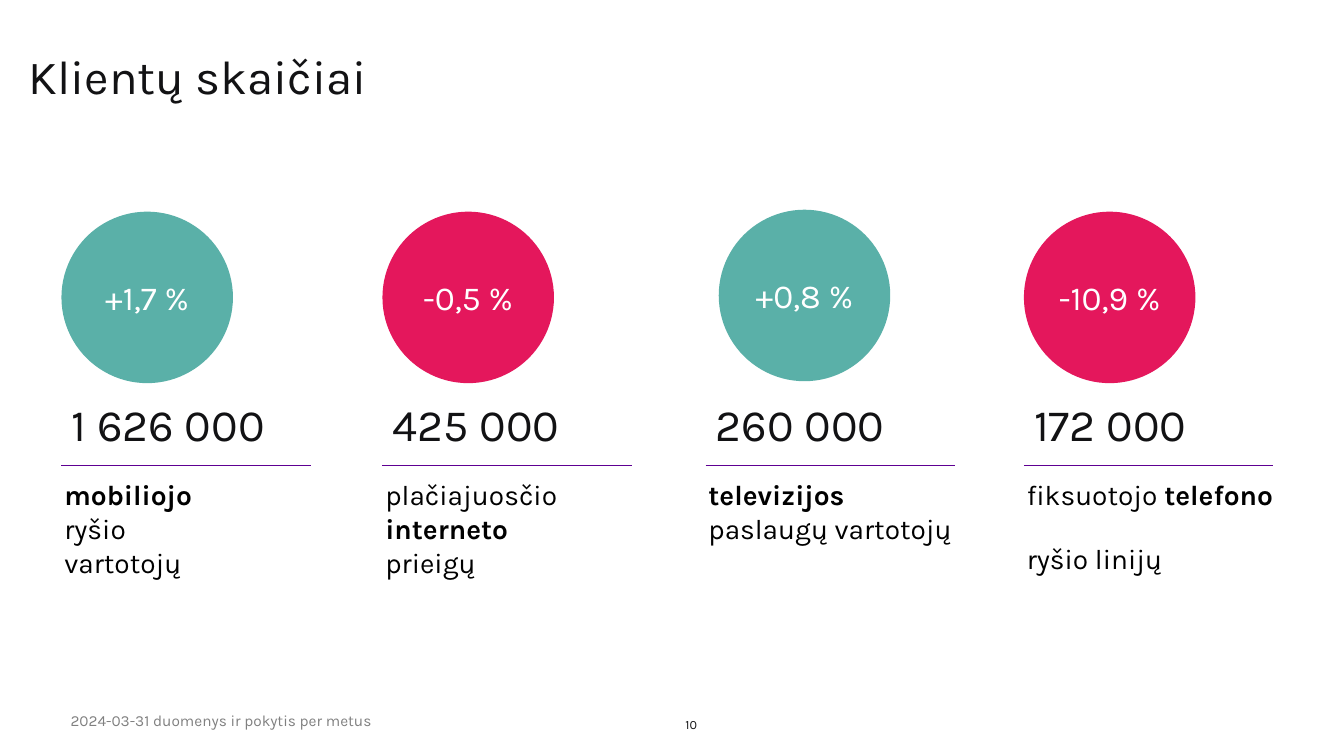
"""Build the slide of customer counts and their yearly change."""
from dataclasses import dataclass

from pptx import Presentation
from pptx.dml.color import RGBColor
from pptx.enum.shapes import MSO_CONNECTOR, MSO_SHAPE
from pptx.enum.text import MSO_ANCHOR, PP_ALIGN
from pptx.oxml.ns import qn
from pptx.slide import Slide
from pptx.text.text import TextFrame
from pptx.util import Pt
from lxml import etree

TOP, MIDDLE, BOTTOM = MSO_ANCHOR.TOP, MSO_ANCHOR.MIDDLE, MSO_ANCHOR.BOTTOM
CENTER = PP_ALIGN.CENTER
ELLIPSE = MSO_SHAPE.OVAL
STRAIGHT = MSO_CONNECTOR.STRAIGHT

FONT = "Karla"
INK = RGBColor(0x12, 0x12, 0x14)
BLACK = RGBColor(0x00, 0x00, 0x00)
GREY = RGBColor(0x80, 0x80, 0x80)
WHITE = RGBColor(0xFF, 0xFF, 0xFF)
PURPLE = RGBColor(0x5E, 0x00, 0x92)
GROWTH = RGBColor(0x5A, 0xB0, 0xA8)
DECLINE = RGBColor(0xE4, 0x17, 0x5C)

CIRCLE_SIZE = 122.5
RULE_TOP = 332.6
RULE_WIDTH = 178


@dataclass(frozen=True)
class Words:
    text: str
    bold: bool = False
    ends_line: bool = False


@dataclass(frozen=True)
class Service:
    left: float
    change: str
    count: str
    label: tuple[Words, ...]
    label_width: float
    count_width: float = 203
    circle_shift: float = 0
    circle_top: float = 151.2


SERVICES = (
    Service(43.9, "+1,7 %", "1 626 000",
            (Words("mobiliojo ", True, True), Words("ryšio ", False, True),
             Words("vartotojų")), 229),
    Service(273.2, "-0,5 %", "425 000",
            (Words("plačiajuosčio "), Words("interneto ", True, True),
             Words("prieigų")), 203),
    Service(504, "+0,8 %", "260 000",
            (Words("televizijos ", True), Words("paslaugų vartotojų")), 193,
            circle_shift=9.4, circle_top=149.8),
    Service(731.4, "-10,9 %", "172 000",
            (Words("fiksuotojo "), Words("telefono ", True, True),
             Words("ryšio linijų")), 193, count_width=173.5),
)


def write(frame: TextFrame, words: tuple[Words, ...], size: float, color: RGBColor,
          anchor: MSO_ANCHOR = TOP, inset_x: float = 0, inset_y: float = 0) -> None:
    """Fill a text frame with styled runs."""
    frame.word_wrap = True
    frame.vertical_anchor = anchor
    frame.margin_left = frame.margin_right = Pt(inset_x)
    frame.margin_top = frame.margin_bottom = Pt(inset_y)
    paragraph = frame.paragraphs[0]
    for part in words:
        run = paragraph.add_run()
        run.text = part.text
        run.font.name = FONT
        run.font.size = Pt(size)
        run.font.bold = part.bold
        run.font.color.rgb = color
        if part.ends_line:
            paragraph.add_line_break()


def add_text_frame(slide: Slide, left: float, top: float, width: float,
                   height: float) -> TextFrame:
    """Add a text box and return its frame."""
    return slide.shapes.add_textbox(Pt(left), Pt(top), Pt(width), Pt(height)).text_frame


def add_change_circle(slide: Slide, service: Service) -> None:
    """Draw the circle that holds the yearly change."""
    circle = slide.shapes.add_shape(
        ELLIPSE, Pt(service.left + service.circle_shift), Pt(service.circle_top),
        Pt(CIRCLE_SIZE), Pt(CIRCLE_SIZE))
    circle.shadow.inherit = False
    circle.fill.solid()
    circle.fill.fore_color.rgb = GROWTH if service.change.startswith("+") else DECLINE
    circle.line.fill.background()
    write(circle.text_frame, (Words(service.change),), 24, WHITE, MIDDLE)
    circle.text_frame.paragraphs[0].alignment = CENTER


def add_rule(slide: Slide, left: float) -> None:
    """Draw the line between a count and its label."""
    rule = slide.shapes.add_connector(
        STRAIGHT, Pt(left), Pt(RULE_TOP), Pt(left + RULE_WIDTH), Pt(RULE_TOP))
    rule.line.color.rgb = PURPLE
    rule.line.width = Pt(1)
    etree.SubElement(rule._element.spPr, qn("a:effectLst"))


def add_service(slide: Slide, service: Service) -> None:
    """Draw one service column."""
    label = add_text_frame(slide, service.left - 4, 338.4, service.label_width, 87)
    write(label, service.label, 20, BLACK, inset_x=6, inset_y=3)
    count = add_text_frame(slide, service.left + 4.3, 306, service.count_width, 18.7)
    write(count, (Words(service.count),), 32, INK, BOTTOM, 3, 3)
    add_rule(slide, service.left)
    add_change_circle(slide, service)


def main() -> None:
    """Build and save the slide."""
    presentation = Presentation()
    presentation.slide_width = Pt(960)
    presentation.slide_height = Pt(540)
    slide = presentation.slides.add_slide(presentation.slide_layouts[6])

    title = add_text_frame(slide, 20.2, 39.6, 919.4, 72.7)
    write(title, (Words("Klientų skaičiai"),), 34, INK)
    title.paragraphs[0].line_spacing = 0.86
    footer = add_text_frame(slide, 50.4, 507.6, 810.7, 13.7)
    write(footer, (Words("2024-03-31 duomenys ir pokytis per metus"),), 11, GREY)
    page_number = add_text_frame(slide, 489.6, 505.4, 58.3, 17.3)
    write(page_number, (Words("10"),), 9, INK, BOTTOM)

    for service in SERVICES:
        add_service(slide, service)
    presentation.save("out.pptx")


if __name__ == "__main__":
    main()
